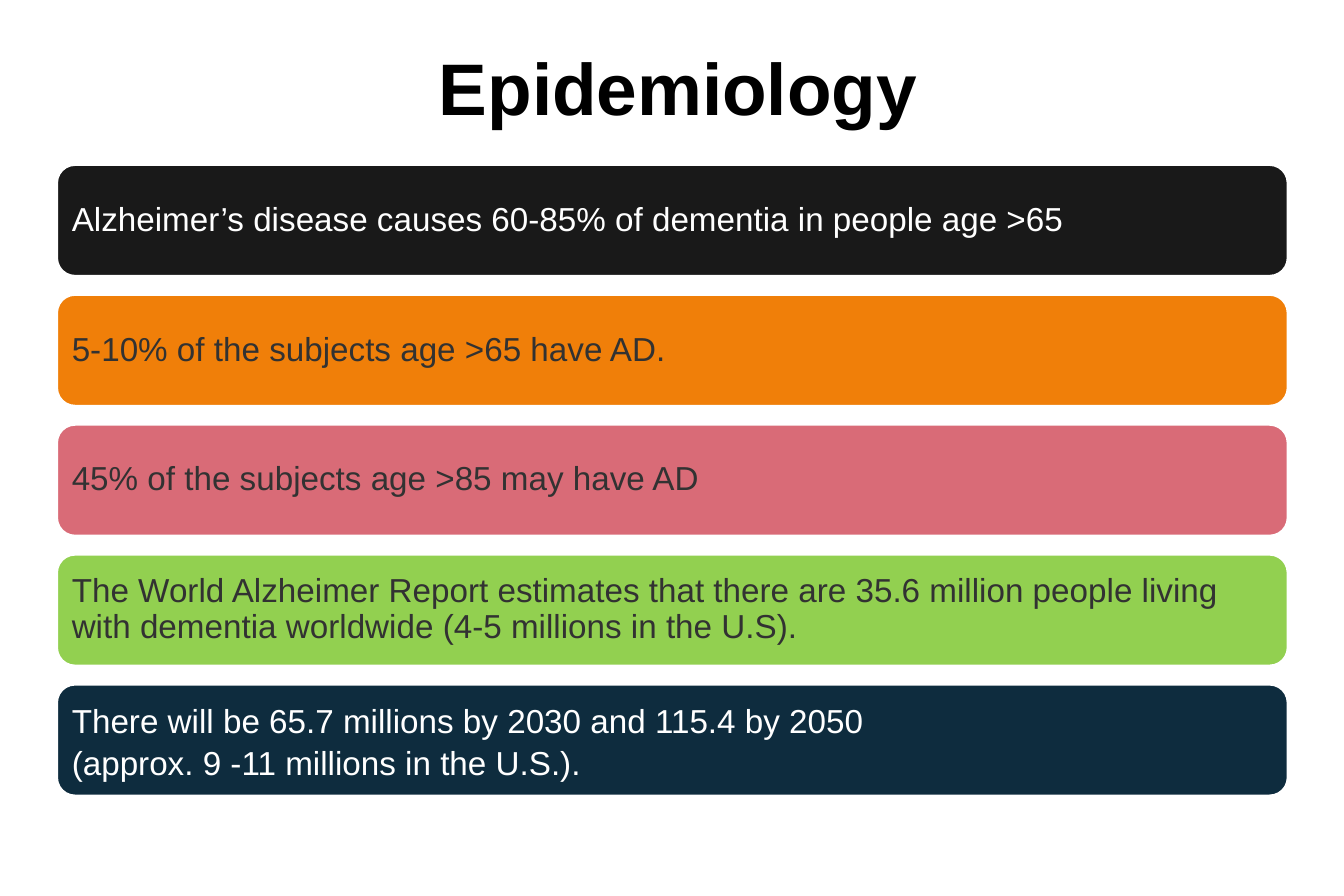
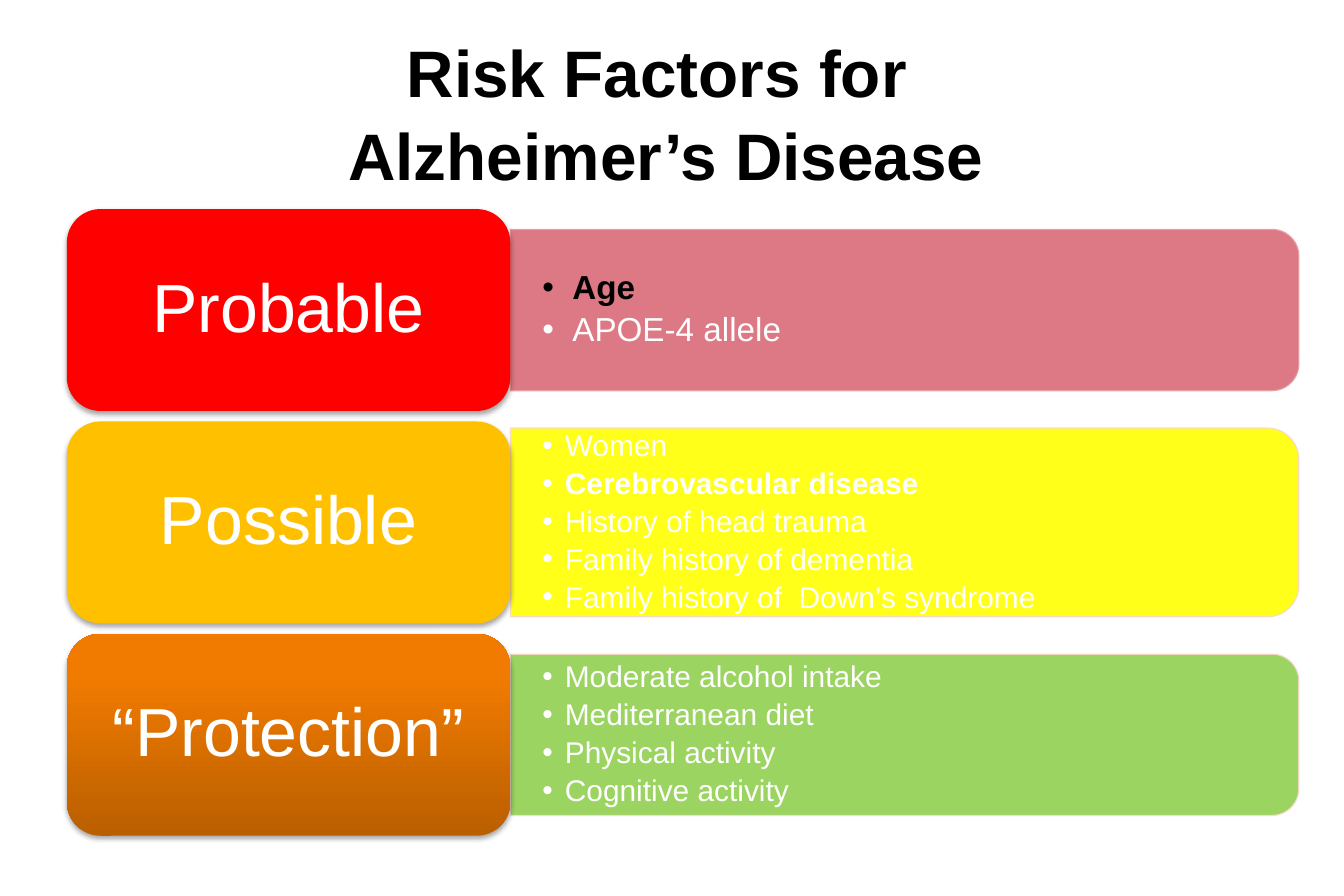
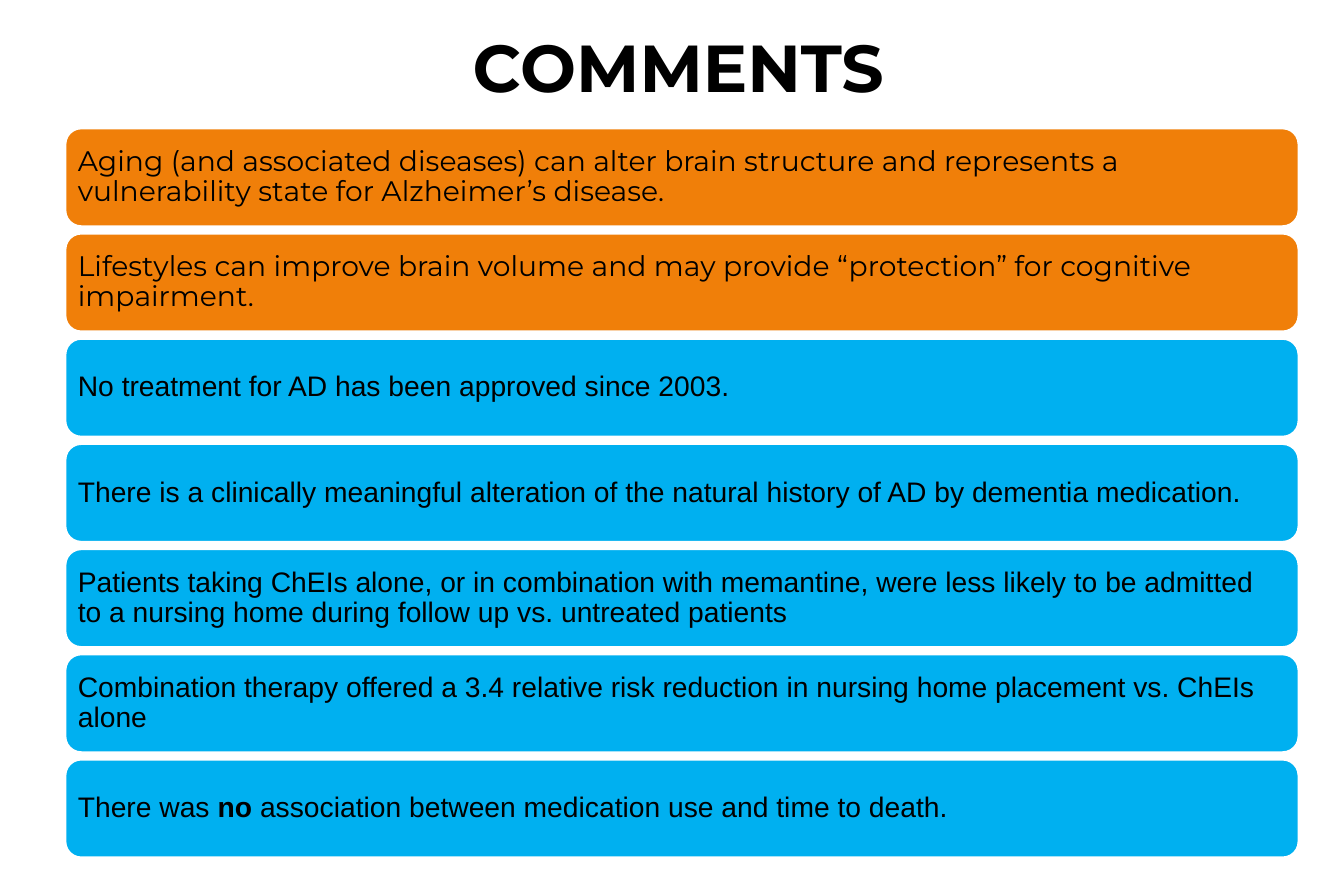
from lxml.etree import SubElement
from pptx import Presentation
from pptx.dml.color import RGBColor
from pptx.enum.shapes import MSO_SHAPE
from pptx.enum.text import MSO_ANCHOR, MSO_AUTO_SIZE, PP_ALIGN
from pptx.oxml.ns import qn
from pptx.util import Pt

BLACK = RGBColor(0x00, 0x00, 0x00)
WHITE = RGBColor(0xFF, 0xFF, 0xFF)
CHARCOAL = RGBColor(0x19, 0x19, 0x19)
DARK_GRAY = RGBColor(0x32, 0x32, 0x32)
ORANGE = RGBColor(0xF0, 0x7F, 0x09)
ROSE = RGBColor(0xD9, 0x6B, 0x77)
PALE_ROSE = RGBColor(0xE6, 0x9C, 0xA4)
GREEN = RGBColor(0x92, 0xD0, 0x50)
NAVY = RGBColor(0x0E, 0x2C, 0x3E)
SKY_BLUE = RGBColor(0x00, 0xB0, 0xF0)
RED = RGBColor(0xFF, 0x00, 0x00)
AMBER = RGBColor(0xFF, 0xC0, 0x00)
YELLOW = RGBColor(0xFF, 0xFF, 0x00)
PEACH = RGBColor(0xF9, 0xD8, 0xCC)
BURNT_ORANGE = RGBColor(0xBA, 0x5F, 0x00)
BRIGHT_ORANGE = RGBColor(0xF1, 0x7B, 0x00)

SANS = "Arial"
DISPLAY = "Montserrat"


class Deck:
    """Holds the presentation, its shared style and the current slide."""

    def __init__(self):
        self.presentation = Presentation()
        self.presentation.slide_width = Pt(810)
        self.presentation.slide_height = Pt(540)
        self.slide = None

    def add_slide(self, title, left, top, width, height, size, font=SANS):
        layout = self.presentation.slide_layouts.get_by_name("Title Only")
        self.slide = self.presentation.slides.add_slide(layout)
        shape = self.slide.shapes.title
        shape.left, shape.top = Pt(left), Pt(top)
        shape.width, shape.height = Pt(width), Pt(height)
        frame = shape.text_frame
        frame.text = title
        frame.auto_size = MSO_AUTO_SIZE.NONE
        frame.vertical_anchor = MSO_ANCHOR.MIDDLE
        paragraph = frame.paragraphs[0]
        paragraph.alignment = PP_ALIGN.CENTER
        paragraph.line_spacing = 1.05
        for run in paragraph.runs:
            self.format_run(run, size, BLACK, font, True)

    def format_run(self, run, size, color, font=SANS, bold=False):
        run.font.size = Pt(size)
        run.font.color.rgb = color
        run.font.name = font
        run.font.bold = bold

    def set_lines(self, shape, lines, size, color, font=SANS, bold_phrase="",
                  align=PP_ALIGN.LEFT, inset=(0, 0), spacing=0.9):
        """Fill a shape with one paragraph per line; bold_phrase is set bold."""
        frame = shape.text_frame
        frame.word_wrap = True
        frame.vertical_anchor = MSO_ANCHOR.MIDDLE
        frame.margin_left = frame.margin_right = Pt(inset[0])
        frame.margin_top = frame.margin_bottom = Pt(inset[1])
        frame.text = "\n".join(lines)
        for paragraph, line in zip(frame.paragraphs, lines):
            paragraph.alignment = align
            paragraph.line_spacing = spacing
            if bold_phrase and bold_phrase in line:
                paragraph.clear()
                for part in line.partition(bold_phrase):
                    if part:
                        paragraph.add_run().text = part
            for run in paragraph.runs:
                self.format_run(run, size, color, font, run.text == bold_phrase)
        return frame

    def add_shape(self, kind, left, top, width, height, fill):
        shape = self.slide.shapes.add_shape(
            kind, Pt(left), Pt(top), Pt(width), Pt(height))
        shape.shadow.inherit = False
        shape.fill.solid()
        shape.fill.fore_color.rgb = fill
        shape.line.fill.background()
        return shape

    def add_bar(self, left, top, width, height, fill, lines, size, color,
                inset, **style):
        bar = self.add_shape(MSO_SHAPE.ROUNDED_RECTANGLE,
                             left, top, width, height, fill)
        bar.line.color.rgb = WHITE
        bar.line.width = Pt(2)
        self.set_lines(bar, lines, size, color, inset=(inset, inset), **style)

    def add_category(self, left, top, width, height, fill, label):
        """Add a large rounded label with a soft shadow below it."""
        category = self.add_shape(MSO_SHAPE.ROUNDED_RECTANGLE,
                                  left, top, width, height, fill)
        effects = category._element.spPr.find(qn("a:effectLst"))
        shadow = SubElement(effects, qn("a:outerShdw"), blurRad=str(Pt(3.1)),
                            dist=str(Pt(1.8)), dir="5400000", rotWithShape="0")
        shadow_color = SubElement(shadow, qn("a:srgbClr"), val=str(BLACK))
        SubElement(shadow_color, qn("a:alpha"), val="35000")
        self.set_lines(category, [label], 41, WHITE, align=PP_ALIGN.CENTER,
                       inset=(12, 6))
        return category

    def add_panel(self, left, middle, width, height, fill, outline):
        """Add a translucent panel rounded on its right side only."""
        center = left + width / 2
        panel = self.add_shape(MSO_SHAPE.ROUND_2_SAME_RECTANGLE,
                               center - height / 2, middle - width / 2,
                               height, width, fill)
        panel.rotation = 90
        panel.line.color.rgb = outline
        panel.line.width = Pt(0.75)
        for color in panel._element.spPr.iter(qn("a:srgbClr")):
            SubElement(color, qn("a:alpha"), val="90000")

    def add_bullets(self, left, middle, width, height, lines, size, indent,
                    bold_phrase):
        box = self.slide.shapes.add_textbox(
            Pt(left), Pt(middle - height / 2), Pt(width), Pt(height))
        frame = self.set_lines(box, lines, size, WHITE,
                               bold_phrase=bold_phrase, inset=(19.4, 0))
        for paragraph in frame.paragraphs:
            paragraph.space_after = Pt(size * 0.19)
            properties = paragraph._p.get_or_add_pPr()
            properties.set("marL", str(Pt(indent)))
            properties.set("indent", str(-Pt(indent)))
            SubElement(properties, qn("a:buFont"), typeface=SANS)
            SubElement(properties, qn("a:buChar"), char="•")
        return frame


def build_epidemiology(deck):
    deck.add_slide("Epidemiology", 44.6, 5.8, 728.6, 90, 44)
    facts = [
        (CHARCOAL, WHITE, 0.9,
         ["Alzheimer’s disease causes 60-85% of dementia in people age >65"]),
        (ORANGE, DARK_GRAY, 0.9, ["5-10% of the subjects age >65 have AD."]),
        (ROSE, DARK_GRAY, 0.9, ["45% of the subjects age >85 may have AD"]),
        (GREEN, DARK_GRAY, 0.9,
         ["The World Alzheimer Report estimates that there are 35.6 million "
          "people living with dementia worldwide (4-5 millions in the U.S)."]),
        (NAVY, WHITE, 1.05,
         ["There will be 65.7 millions by 2030 and 115.4 by 2050",
          "(approx. 9 -11 millions in the U.S.)."]),
    ]
    for index, (fill, color, spacing, lines) in enumerate(facts):
        deck.add_bar(34, 99 + index * 78.3, 742.5, 67.7, fill, lines, 20,
                     color, 6, spacing=spacing)


def build_risk_factors(deck):
    deck.add_slide("Risk Factors for \vAlzheimer’s Disease",
                   20.2, 21.6, 762.5, 90, 39.6)
    left, top, width, height, pitch = 40.3, 126, 267.3, 121.7, 128
    panel_left, panel_width = left + width, 475.2
    groups = [
        ("Probable", RED, ROSE, PALE_ROSE, 97.2, 20, 18, "Age",
         ["Age", "APOE-4 allele"]),
        ("Possible", AMBER, YELLOW, PEACH, 113.8, 18, 13.5,
         "Cerebrovascular disease",
         ["Women", "Cerebrovascular disease", "History of head trauma",
          "Family history of dementia", "Family history of  Down’s syndrome"]),
        ("“Protection”", BRIGHT_ORANGE, GREEN, PEACH, 97.2, 18, 13.5, "",
         ["Moderate alcohol intake", "Mediterranean diet",
          "Physical activity", "Cognitive activity"]),
    ]
    categories, bullet_frames = [], []
    for index, (label, fill, panel_fill, outline, panel_height, size, indent,
                bold_phrase, lines) in enumerate(groups):
        row_top = top + index * pitch
        middle = row_top + height / 2
        deck.add_panel(panel_left, middle, panel_width, panel_height,
                       panel_fill, outline)
        bullet_frames.append(deck.add_bullets(
            panel_left, middle, panel_width, panel_height, lines, size,
            indent, bold_phrase))
        categories.append(
            deck.add_category(left, row_top, width, height, fill, label))

    age = bullet_frames[0].paragraphs[0]
    age.runs[0].font.color.rgb = BLACK

    gradient = categories[-1].fill
    gradient.gradient()
    gradient.gradient_angle = 90
    stops = [(0, BURNT_ORANGE), (0.8, BRIGHT_ORANGE)]
    for stop, (position, color) in zip(gradient.gradient_stops, stops):
        stop.position = position
        stop.color.rgb = color


def build_comments(deck):
    deck.add_slide("COMMENTS", 75, 3, 667.5, 71.3, 40, DISPLAY)
    comments = [
        (ORANGE, DISPLAY,
         "Aging (and associated diseases) can alter brain structure and "
         "represents a vulnerability state for Alzheimer’s disease."),
        (ORANGE, DISPLAY,
         "Lifestyles can improve brain volume and may provide “protection” "
         "for cognitive impairment."),
        (SKY_BLUE, SANS, "No treatment for AD has been approved since 2003."),
        (SKY_BLUE, SANS,
         "There is a clinically meaningful alteration of the natural history "
         "of AD by dementia medication."),
        (SKY_BLUE, SANS,
         "Patients taking ChEIs alone, or in combination with memantine, were "
         "less likely to be admitted to a nursing home during follow up vs. "
         "untreated patients"),
        (SKY_BLUE, SANS,
         "Combination therapy offered a 3.4 relative risk reduction in "
         "nursing home placement vs. ChEIs alone"),
        (SKY_BLUE, SANS,
         "There was no association between medication use and time to death."),
    ]
    for index, (fill, font, text) in enumerate(comments):
        is_last = index == len(comments) - 1
        deck.add_bar(39, 77 + index * 63.4, 744, 59.8, fill, [text], 17,
                     BLACK, 5, font=font, bold_phrase="no" if is_last else "")


def main():
    deck = Deck()
    build_epidemiology(deck)
    build_risk_factors(deck)
    build_comments(deck)
    deck.presentation.save("out.pptx")


if __name__ == "__main__":
    main()
